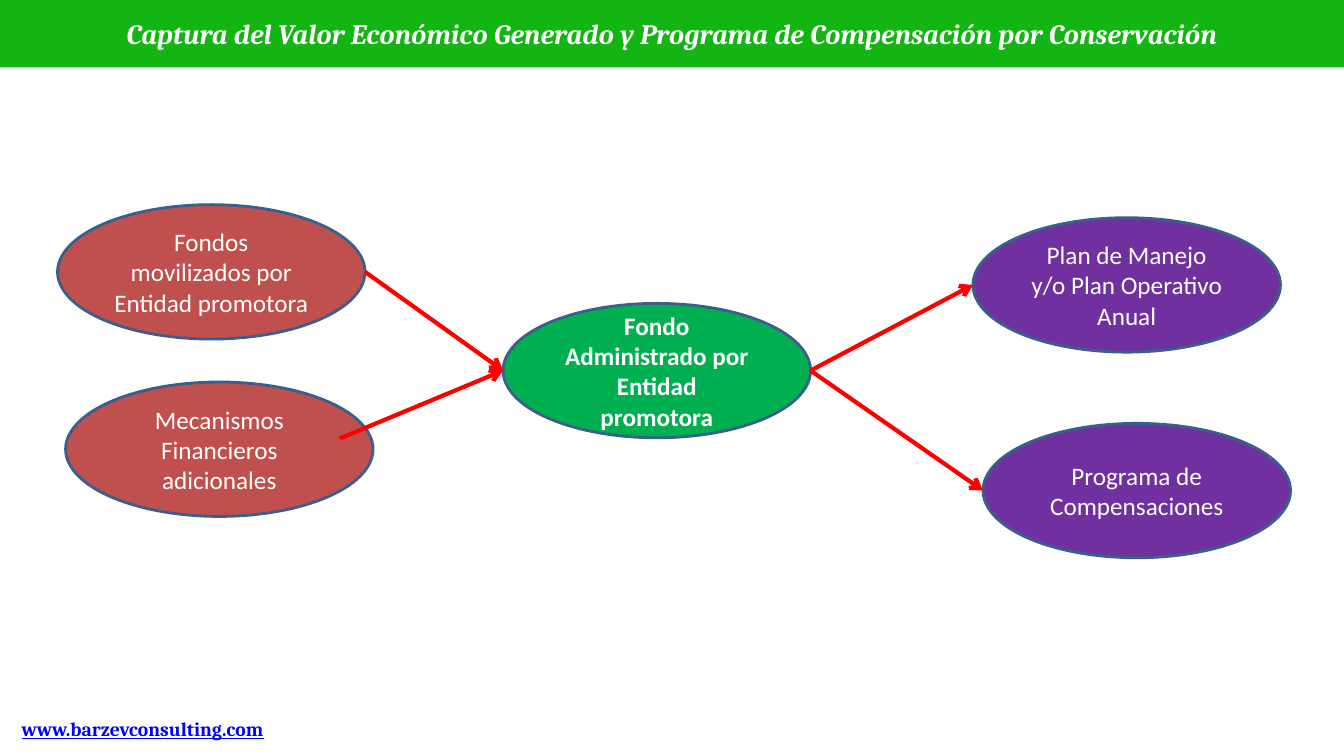
from pptx import Presentation
from pptx.dml.color import RGBColor
from pptx.enum.shapes import MSO_CONNECTOR, MSO_SHAPE
from pptx.enum.text import MSO_ANCHOR, PP_ALIGN
from pptx.oxml.ns import qn
from pptx.util import Inches, Pt
from lxml import etree

OVAL, RECT = MSO_SHAPE.OVAL, MSO_SHAPE.RECTANGLE
LINE = MSO_CONNECTOR.STRAIGHT
TOP, MIDDLE = MSO_ANCHOR.TOP, MSO_ANCHOR.MIDDLE
CENTER = PP_ALIGN.CENTER

WHITE = RGBColor(0xFF, 0xFF, 0xFF)
GRASS = RGBColor(0x13, 0xB5, 0x13)
GREEN = RGBColor(0x00, 0xB0, 0x50)
PURPLE = RGBColor(0x70, 0x30, 0xA0)
BRICK = RGBColor(0xC0, 0x50, 0x4D)
STEEL = RGBColor(0x3A, 0x5F, 0x8C)
RED = RGBColor(0xFF, 0x00, 0x00)
BLUE = RGBColor(0x00, 0x00, 0xFF)

WIDE, HIGH = Inches(13.33), Inches(7.5)
OVAL_W, OVAL_H = 22.88, 17.78

BODY = {"name": "Calibri", "size": Pt(18)}
STRONG = {**BODY, "bold": True}
TITLE = {"name": "Cambria", "size": Pt(20), "bold": True, "italic": True}
SITE = {"name": "Cambria", "size": Pt(14), "bold": True, "underline": True}

NODES = {
    "fund": (37.43, 40.13, GREEN, STRONG, "Fondo Administrado por Entidad promotora"),
    "pay": (73.14, 56, PURPLE, BODY, "Programa de Compensaciones"),
    "plan": (72.39, 28.8, PURPLE, BODY, "Plan de Manejo y/o Plan Operativo Anual"),
    "extra": (4.88, 50.53, BRICK, BODY, "Mecanismos Financieros\nadicionales"),
    "raised": (4.28, 27.07, BRICK, BODY, "Fondos movilizados por Entidad promotora"),
}


def across(share):
    """Turn a percentage of the slide width into a length."""
    return round(WIDE * share / 100)


def down(share):
    """Turn a percentage of the slide height into a length."""
    return round(HIGH * share / 100)


def add_box(slide, kind, area, fill, text, style, ink=WHITE, anchor=MIDDLE):
    """Add a filled shape with centred text."""
    x, y, w, h = area
    box = slide.shapes.add_shape(kind, across(x), down(y), across(w), down(h))
    box.shadow.inherit = False
    box.fill.solid()
    box.fill.fore_color.rgb = fill
    box.line.fill.background()
    frame = box.text_frame
    frame.word_wrap = True
    frame.vertical_anchor = anchor
    frame.text = text
    for para in frame.paragraphs:
        para.alignment = CENTER
        font = para.runs[0].font
        for key, value in style.items():
            setattr(font, key, value)
        font.color.rgb = ink
    return box


def add_node(slide, x, y, fill, style, text):
    """Add an outlined ellipse of the common size."""
    node = add_box(slide, OVAL, (x, y, OVAL_W, OVAL_H), fill, text, style)
    node.line.color.rgb = STEEL
    node.line.width = Pt(2)
    return node


def left(node):
    """Give the middle of the left side."""
    return node.left, node.top + node.height // 2


def right(node):
    """Give the middle of the right side."""
    return node.left + node.width, node.top + node.height // 2


def add_arrow(slide, start, end):
    """Add a red arrow between two points."""
    arrow = slide.shapes.add_connector(LINE, *start, *end)
    arrow.line.color.rgb = RED
    arrow.line.width = Pt(3)
    tail = etree.SubElement(arrow.line._get_or_add_ln(), qn("a:tailEnd"))
    tail.set("type", "arrow")
    etree.SubElement(arrow._element.spPr, qn("a:effectLst"))


def main():
    """Build the funding flow slide."""
    deck = Presentation()
    deck.slide_width, deck.slide_height = WIDE, HIGH
    slide = deck.slides.add_slide(deck.slide_layouts[6])
    add_box(slide, RECT, (0.6, 94.13, 20.03, 4.53), WHITE,
            "www.barzevconsulting.com", SITE, BLUE, TOP)
    nodes = {key: add_node(slide, *node) for key, node in NODES.items()}
    fund = nodes["fund"]
    for goal in ("plan", "pay"):
        add_arrow(slide, right(fund), left(nodes[goal]))
    for start in (right(nodes["raised"]), (across(25.28), down(58))):
        add_arrow(slide, start, left(fund))
    add_box(slide, RECT, (0, 0, 100, 8.93), GRASS,
            "Captura del Valor Económico Generado y Programa de "
            "Compensación por Conservación", TITLE)
    deck.save("out.pptx")


if __name__ == "__main__":
    main()
